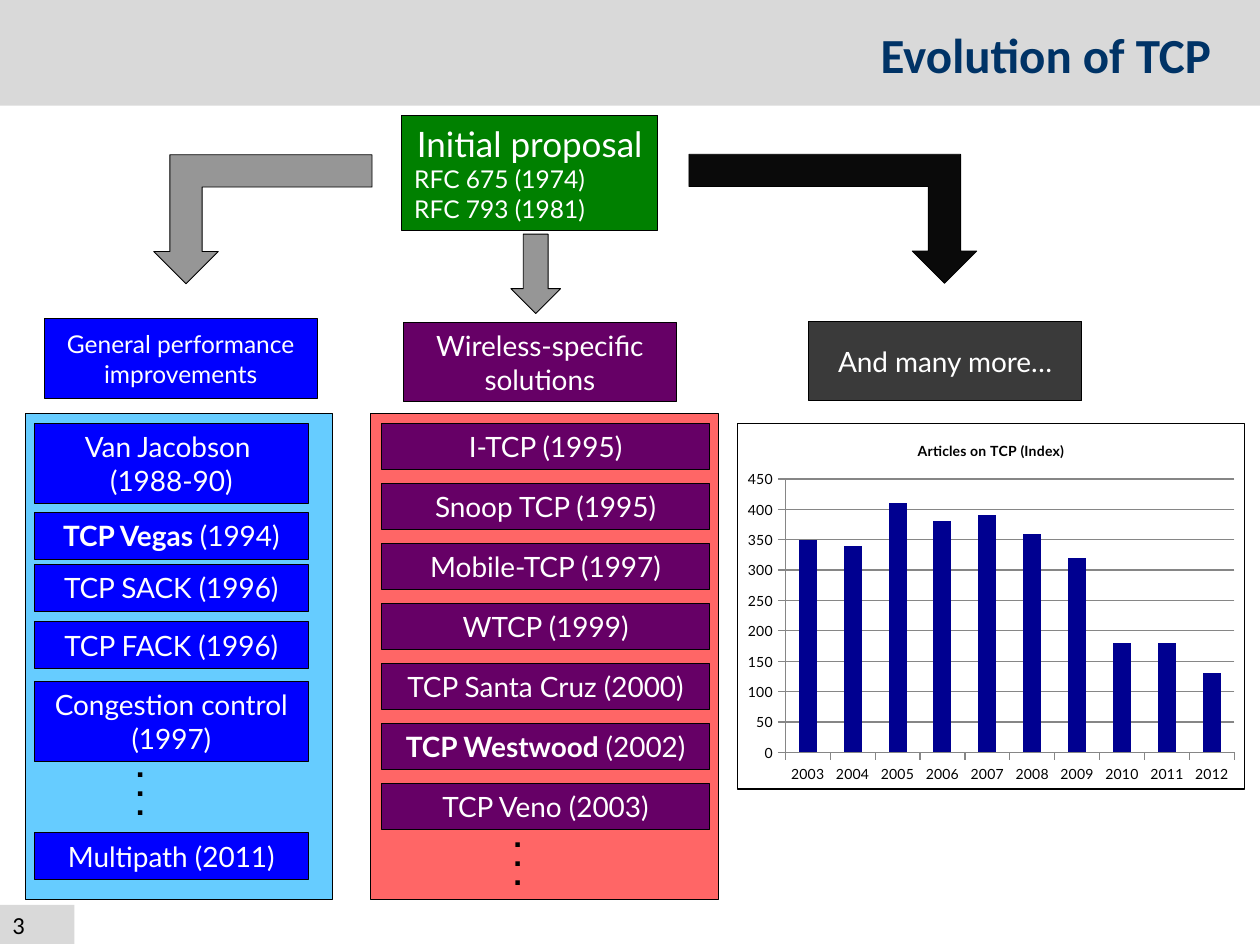
"""Build the slide on the evolution of TCP."""
from dataclasses import dataclass

from pptx import Presentation
from pptx.chart.data import CategoryChartData as Data
from pptx.dml.color import RGBColor as Rgb
from pptx.enum.chart import XL_CHART_TYPE as Kind, XL_TICK_MARK as Tick
from pptx.enum.shapes import MSO_SHAPE as Form
from pptx.enum.text import MSO_ANCHOR as Anchor, PP_ALIGN as Align
from pptx.oxml import parse_xml
from pptx.oxml.ns import nsdecls, qn
from pptx.util import Cm, Pt


@dataclass(frozen=True)
class Theme:
    """Hold the colours, fonts and type sizes."""
    white: str = "FFFFFF"
    black: str = "000000"
    navy: str = "003366"
    band: str = "D9D9D9"
    green: str = "008000"
    blue: str = "0000FF"
    sky: str = "66CCFF"
    plum: str = "660066"
    coral: str = "FF6666"
    dark: str = "3A3A3A"
    grey: str = "969696"
    ink: str = "0A0A0A"
    bar: str = "000090"
    grid: str = "868686"
    head: str = "Calibri"
    body: str = "Lato"
    mark: str = "Arial"
    title: int = 28
    large: int = 20
    dot: int = 18
    text: int = 16
    small: int = 14
    tiny: int = 8
    line: float = 0.5


class Board:
    """Draw styled elements on one slide."""

    def __init__(self, slide, theme):
        """Keep the slide and its theme."""
        self.slide, self.theme = slide, theme
        self.shapes = slide.shapes

    def font(self, font, size, color, name=None, bold=False):
        """Style one font."""
        font.name, font.size, font.bold = name or self.theme.body, Pt(size), bold
        font.color.rgb = Rgb.from_string(color)

    def shape(self, area, fill, form=Form.RECTANGLE, edge=True):
        """Add a filled shape."""
        item = self.shapes.add_shape(form, *map(Cm, area))
        item.shadow.inherit = False
        item.fill.solid()
        item.fill.fore_color.rgb = Rgb.from_string(fill)
        if edge:
            item.line.color.rgb = Rgb.from_string(self.theme.black)
            item.line.width = Pt(self.theme.line)
        else:
            item.line.fill.background()
        return item

    def title(self, text, area):
        """Place the title above the shapes drawn so far."""
        item = self.shapes.title
        item.left, item.top, item.width, item.height = map(Cm, area)
        self.shapes.element.append(item.element)
        frame = item.text_frame
        frame.text, frame.vertical_anchor = text, Anchor.MIDDLE
        para = frame.paragraphs[0]
        para.alignment = Align.RIGHT
        self.font(para.font, self.theme.title, self.theme.navy, self.theme.head, True)

    def label(self, text, area, fill, size=None, lead=""):
        """Add a box with centred text and an optional bold lead."""
        frame = self.shape(area, fill).text_frame
        frame.word_wrap, frame.vertical_anchor = True, Anchor.MIDDLE
        frame.text = text
        for para in frame.paragraphs:
            para.alignment = Align.CENTER
            self.font(para.font, size or self.theme.text, self.theme.white)
        if lead:
            run = frame.paragraphs[0].runs[0]
            run.text, run.font.bold = lead, True
            frame.paragraphs[0].add_run().text = text
        return frame

    def page(self, text, area):
        """Add the page number."""
        frame = self.shape(area, self.theme.band, edge=False).text_frame
        frame.text, frame.vertical_anchor = text, Anchor.MIDDLE
        para = frame.paragraphs[0]
        para.alignment = Align.LEFT
        self.font(para.font, self.theme.small, self.theme.black, self.theme.head)

    def bend(self, area, fill, flip=False):
        """Add a bent arrow that points down."""
        item = self.shape(area, fill, Form.BENT_UP_ARROW)
        item.rotation = 180
        if flip:
            item.element.spPr.find(qn("a:xfrm")).set("flipH", "1")

    def dots(self, left, top):
        """Add three stacked dots."""
        frame = self.shapes.add_textbox(*map(Cm, (left, top, 2.59, 1.47))).text_frame
        frame.word_wrap = True
        frame.text = ".\v.\n."
        for para in frame.paragraphs:
            para.line_spacing = 0.5
            self.font(para.font, self.theme.dot, self.theme.black, self.theme.mark, True)

    def chart(self, name, cats, vals, area):
        """Add a framed column chart."""
        look = self.theme
        data = Data()
        data.categories = cats
        data.add_series(name, vals)
        chart = self.shapes.add_chart(Kind.COLUMN_CLUSTERED, *map(Cm, area), data).chart
        self.font(chart.font, look.tiny, look.black)
        chart.has_legend, chart.has_title = False, True
        chart.chart_title.text_frame.text = name
        para = chart.chart_title.text_frame.paragraphs[0]
        self.font(para.font, look.tiny, look.black, bold=True)
        plot = chart.plots[0]
        plot.gap_width, plot.vary_by_categories = 150, False
        fill = plot.series[0].format.fill
        fill.solid()
        fill.fore_color.rgb = Rgb.from_string(look.bar)
        axis = chart.value_axis
        axis.minimum_scale, axis.maximum_scale, axis.major_unit = 0, 450, 50
        axis.has_major_gridlines = True
        chart.category_axis.has_major_gridlines = False
        for part in (axis, chart.category_axis):
            part.major_tick_mark = Tick.OUTSIDE
        for part in (axis, chart.category_axis, axis.major_gridlines):
            part.format.line.color.rgb = Rgb.from_string(look.grid)
            part.format.line.width = Pt(0.75)
        frame = parse_xml(
            f'<c:spPr {nsdecls("c", "a")}><a:solidFill><a:srgbClr val="{look.white}"/>'
            f'</a:solidFill><a:ln w="{Pt(0.75)}"><a:solidFill>'
            f'<a:srgbClr val="{look.black}"/></a:solidFill></a:ln></c:spPr>')
        chart.element.find(qn("c:txPr")).addprevious(frame)


def main():
    """Draw and save the slide."""
    deck = Presentation()
    deck.slide_width, deck.slide_height = Cm(25.4), Cm(19.05)
    look = Theme()
    board = Board(deck.slides.add_slide(deck.slide_layouts[5]), look)

    board.shape((0, 0, 25.4, 2.13), look.band, edge=False)
    board.shape((7.47, 8.33, 7.01, 9.8), look.coral)
    board.shape((0.51, 8.33, 6.2, 9.8), look.sky)
    board.title("Evolution of TCP", (1.09, 0, 23.57, 2.18))
    board.page("3", (0, 18.24, 1.5, 0.79))

    root = board.label("Initial proposal\nRFC 675 (1974)\nRFC 793 (1981)",
                       (8.1, 2.32, 5.16, 2.32), look.green, look.large)
    root.word_wrap = False
    for para in root.paragraphs[1:]:
        para.alignment, para.font.size = Align.LEFT, Pt(look.small)

    wide, tall = 5.51, 1.6
    for text, left, top, fill, size in (
            ("General performance improvements", 0.89, 6.43, look.blue, look.small),
            ("Wireless-specific solutions", 8.13, 6.5, look.plum, look.text),
            ("And many more…", 16.3, 6.48, look.dark, look.text)):
        board.label(text, (left, top, wide, tall), fill, size)

    row, pair = 0.94, 1.63
    for lead, text, top, high in (
            ("", "Van Jacobson \n(1988-90)", 8.53, pair),
            ("TCP Vegas ", "(1994)", 10.33, row),
            ("", "TCP SACK (1996)", 11.38, row),
            ("", "TCP FACK (1996)", 12.53, row),
            ("", "Congestion control (1997)", 13.73, pair),
            ("", "Multipath (2011)", 16.79, row)):
        board.label(text, (0.7, top, wide, high), look.blue, lead=lead)

    wireless = (("", "I-TCP (1995)"), ("", "Snoop TCP (1995)"),
                ("", "Mobile-TCP (1997)"), ("", "WTCP (1999)"),
                ("", "TCP Santa Cruz (2000)"), ("TCP Westwood ", "(2002)"),
                ("", "TCP Veno (2003)"))
    for step, (lead, text) in enumerate(wireless):
        board.label(text, (7.7, 8.53 + 1.21 * step, 6.6, row), look.plum, lead=lead)

    board.bend((13.89, 3.11, 5.8, 2.6), look.ink, flip=True)
    board.bend((3.1, 3.12, 4.4, 2.6), look.grey)
    board.shape((10.3, 4.72, 1, 1.6), look.grey, Form.DOWN_ARROW)
    board.dots(2.49, 15.24)
    board.dots(10.1, 16.66)
    board.chart("Articles on TCP (Index)", [str(year) for year in range(2003, 2013)],
                (350, 340, 410, 380, 390, 360, 320, 180, 180, 130),
                (14.86, 8.53, 10.24, 7.39))
    deck.save("out.pptx")


if __name__ == "__main__":
    main()
